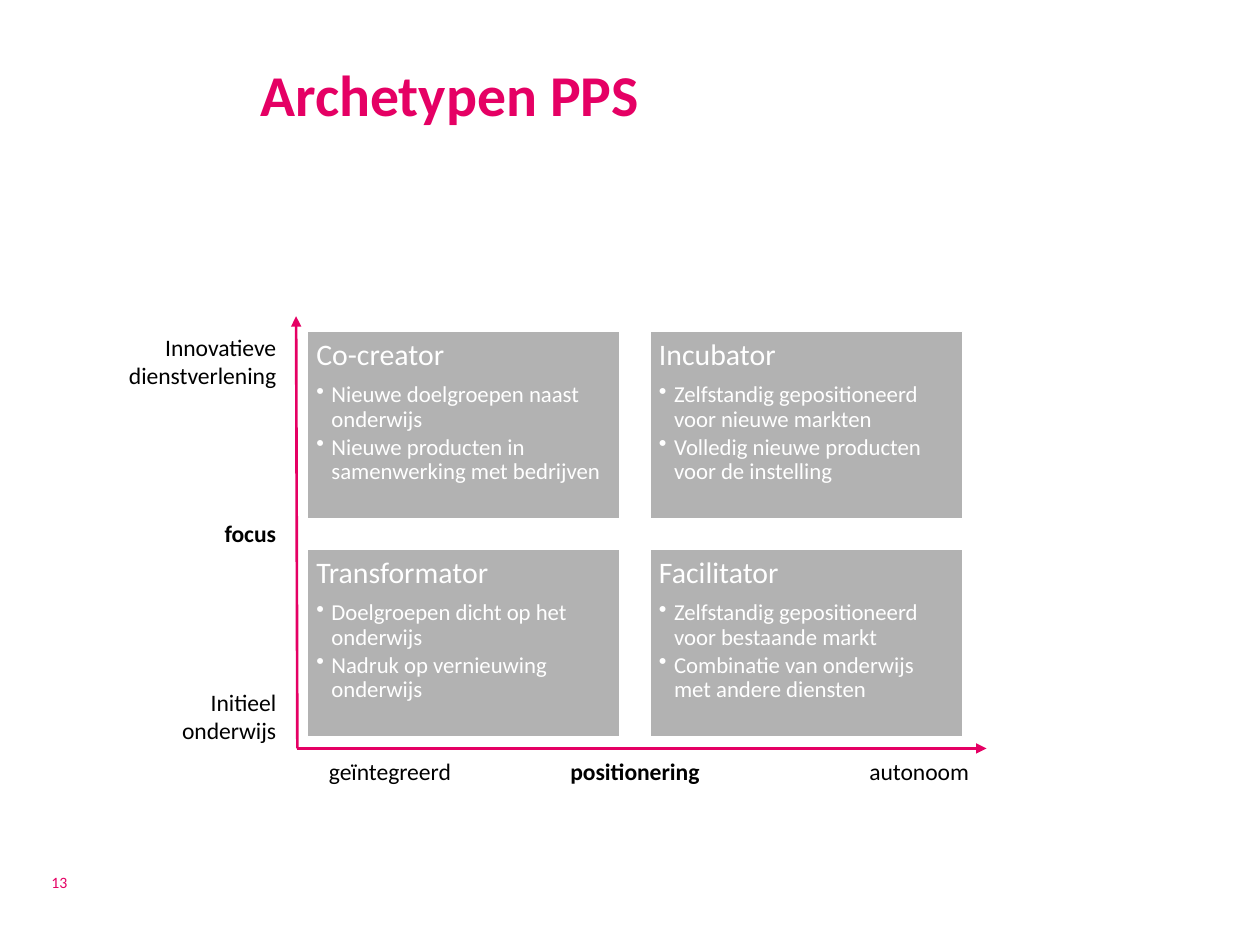
from typing import NamedTuple

from lxml.etree import SubElement
from pptx import Presentation
from pptx.dml.color import RGBColor
from pptx.enum.shapes import MSO_CONNECTOR, MSO_SHAPE
from pptx.enum.text import MSO_ANCHOR, PP_ALIGN
from pptx.oxml.ns import qn
from pptx.util import Inches, Pt

PINK, GREY, WHITE, BLACK = "E50064", "B2B2B2", "FFFFFF", "000000"
FONT = "Calibri"

# Grid of the quadrant, in inches
GRID_LEFT, GRID_TOP = 2.44, 2.63
CARD_WIDTH, CARD_HEIGHT = 2.48, 1.49
COLUMN_STEP, ROW_STEP = 2.72, 1.73
AXIS_X, AXIS_Y = 2.36, 5.94
FOCUS_RIGHT, POSITION_TOP = 2.29, 5.96


class Archetype(NamedTuple):
    column: int
    row: int
    name: str
    traits: tuple[str, ...]


class Label(NamedTuple):
    text: str
    left: float
    top: float
    width: float
    height: float
    size: float = 13.5
    color: str = BLACK
    bold: bool = False
    align: PP_ALIGN = PP_ALIGN.CENTER


def focus_label(text: str, top: float, width: float, height: float, bold: bool = False) -> Label:
    """Label that ends at the left of the vertical axis."""
    return Label(text, FOCUS_RIGHT - width, top, width, height, bold=bold, align=PP_ALIGN.RIGHT)


def position_label(text: str, left: float, width: float, bold: bool = False) -> Label:
    """Label just below the horizontal axis."""
    return Label(text, left, POSITION_TOP, width, 0.33, bold=bold)


ARCHETYPES = (
    Archetype(0, 0, "Co-creator", (
        "Nieuwe doelgroepen naast onderwijs",
        "Nieuwe producten in samenwerking met bedrijven")),
    Archetype(1, 0, "Incubator", (
        "Zelfstandig gepositioneerd voor nieuwe markten",
        "Volledig nieuwe producten voor de instelling")),
    Archetype(0, 1, "Transformator", (
        "Doelgroepen dicht op het onderwijs",
        "Nadruk op vernieuwing onderwijs")),
    Archetype(1, 1, "Facilitator", (
        "Zelfstandig gepositioneerd voor bestaande markt",
        "Combinatie van onderwijs met andere diensten")),
)

LABELS = (
    Label("13", 0.31, 6.88, 1.85, 0.25, 9, PINK, align=PP_ALIGN.LEFT),
    Label("Archetypen PPS", 1.97, 0.42, 5.88, 0.45, 33, PINK, True, PP_ALIGN.LEFT),
    focus_label("Innovatieve dienstverlening", 2.59, 1.67, 0.56),
    focus_label("focus", 4.07, 0.67, 0.33, bold=True),
    focus_label("Initieel onderwijs", 5.41, 1.02, 0.56),
    position_label("geïntegreerd", 2.46, 1.27),
    position_label("positionering", 4.36, 1.36, bold=True),
    position_label("autonoom", 6.76, 1.07),
)


def rgb(color: str) -> RGBColor:
    return RGBColor.from_string(color)


def write(paragraph, text: str, size: float, color: str, bold: bool = False) -> None:
    run = paragraph.add_run()
    run.text = text
    for name, value in {"name": FONT, "size": Pt(size), "bold": bold}.items():
        setattr(run.font, name, value)
    run.font.color.rgb = rgb(color)


def add_label(slide, label: Label) -> None:
    box = slide.shapes.add_textbox(
        Inches(label.left), Inches(label.top), Inches(label.width), Inches(label.height))
    box.text_frame.word_wrap = True
    paragraph = box.text_frame.paragraphs[0]
    paragraph.alignment = label.align
    write(paragraph, label.text, label.size, label.color, label.bold)


def add_bullet(paragraph) -> None:
    properties = paragraph._p.get_or_add_pPr()
    properties.set("marL", str(Inches(0.12)))
    properties.set("indent", str(-Inches(0.12)))
    SubElement(properties, qn("a:buChar")).set("char", "•")


def add_archetype(slide, archetype: Archetype) -> None:
    card = slide.shapes.add_shape(
        MSO_SHAPE.RECTANGLE,
        Inches(GRID_LEFT + archetype.column * COLUMN_STEP),
        Inches(GRID_TOP + archetype.row * ROW_STEP),
        Inches(CARD_WIDTH), Inches(CARD_HEIGHT))
    card.shadow.inherit = False
    card.fill.solid()
    card.fill.fore_color.rgb = rgb(GREY)
    card.line.color.rgb = rgb(WHITE)
    card.line.width = Pt(1)

    frame = card.text_frame
    frame.word_wrap = True
    frame.vertical_anchor = MSO_ANCHOR.TOP
    for side in ("left", "top", "right", "bottom"):
        setattr(frame, f"margin_{side}", Inches(0.07))

    for index, text in enumerate((archetype.name, *archetype.traits)):
        is_trait = index > 0
        paragraph = frame.add_paragraph() if is_trait else frame.paragraphs[0]
        layout = {"alignment": PP_ALIGN.LEFT, "line_spacing": 0.9,
                  "space_after": Pt(2 if is_trait else 6), "level": int(is_trait)}
        for name, value in layout.items():
            setattr(paragraph, name, value)
        if is_trait:
            add_bullet(paragraph)
        write(paragraph, text, 13 if is_trait else 17, WHITE)


def add_axis(slide, end_x: float, end_y: float) -> None:
    axis = slide.shapes.add_connector(
        MSO_CONNECTOR.STRAIGHT,
        Inches(AXIS_X), Inches(AXIS_Y), Inches(end_x), Inches(end_y))
    axis.line.color.rgb = rgb(PINK)
    axis.line.width = Pt(1.5)
    SubElement(axis.line._get_or_add_ln(), qn("a:tailEnd")).set("type", "triangle")
    SubElement(axis._element.spPr, qn("a:effectLst"))


def main() -> None:
    deck = Presentation()
    deck.slide_width, deck.slide_height = Inches(10), Inches(7.5)
    slide = deck.slides.add_slide(deck.slide_layouts[6])

    # Quadrant
    for archetype in ARCHETYPES:
        add_archetype(slide, archetype)

    # Axes: focus upwards, positioning to the right
    add_axis(slide, 2.35, 2.51)
    add_axis(slide, 7.83, AXIS_Y)

    # Title, slide number and axis labels
    for label in LABELS:
        add_label(slide, label)

    deck.save("out.pptx")


if __name__ == "__main__":
    main()
